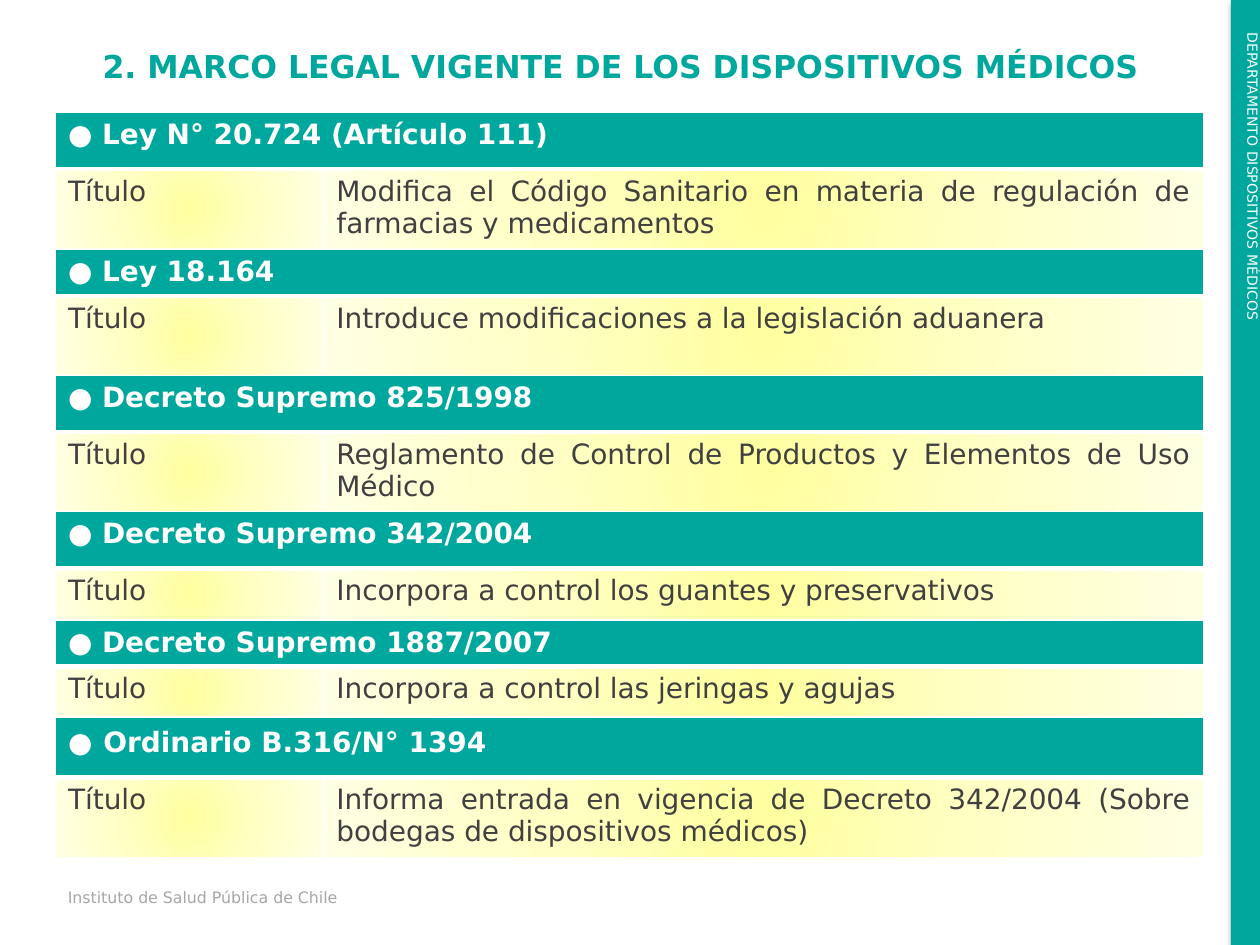
from dataclasses import dataclass

from lxml.etree import SubElement
from pptx import Presentation
from pptx.dml.color import RGBColor
from pptx.enum.shapes import MSO_SHAPE
from pptx.enum.text import MSO_ANCHOR, PP_ALIGN
from pptx.oxml import parse_xml
from pptx.oxml.ns import nsdecls, qn
from pptx.util import Inches, Pt


@dataclass(frozen=True)
class Theme:
    font: str = "DejaVu Sans"
    teal: str = "00A79D"
    white: str = "FFFFFF"
    ink: str = "404040"
    grey: str = "A6A6A6"
    glow: tuple = ((0, "FFFFA0"), (50, "FFFFC5"), (100, "FFFFE3"))
    title_size: int = 18
    body_size: int = 16
    footer_size: int = 9
    side_size: int = 8


theme = Theme()


def add_span(para, text, *, size=theme.body_size, color=theme.ink, bold=False):
    span = para.add_run()
    span.text = text
    span.font.name = theme.font
    span.font.size = Pt(size)
    span.font.bold = bold
    span.font.color.rgb = RGBColor.from_string(color)


def format_cell(cell, top, bottom, glowing):
    """Draw white borders (top and bottom widths in points), then the fill."""
    properties = cell._tc.get_or_add_tcPr()
    for side, width in (("L", 1), ("R", 1), ("T", top), ("B", bottom)):
        line = SubElement(properties, qn(f"a:ln{side}"), w=str(Pt(width)))
        fill = SubElement(line, qn("a:solidFill"))
        SubElement(fill, qn("a:srgbClr"), val=theme.white)
    if glowing:
        stops = "".join(
            f'<a:gs pos="{position * 1000}"><a:srgbClr val="{color}"/></a:gs>'
            for position, color in theme.glow
        )
        properties.append(parse_xml(
            f'<a:gradFill {nsdecls("a")} rotWithShape="1"><a:gsLst>{stops}</a:gsLst>'
            '<a:path path="circle"><a:fillToRect l="50000" t="50000" r="50000" b="50000"/>'
            "</a:path></a:gradFill>"
        ))
    else:
        cell.fill.solid()
        cell.fill.fore_color.rgb = RGBColor.from_string(theme.teal)


deck = Presentation()
deck.slide_width, deck.slide_height = Inches(10), Inches(7.5)
page = deck.slides.add_slide(deck.slide_layouts[5])

# Footer and side strip
footer = page.shapes.add_textbox(Inches(0.44), Inches(7), Inches(3.62), Inches(0.5))
footer.text_frame.word_wrap = True
add_span(footer.text_frame.paragraphs[0], "Instituto de Salud Pública de Chile",
         size=theme.footer_size, color=theme.grey)

strip = page.shapes.add_shape(MSO_SHAPE.RECTANGLE, Inches(9.77), 0, Inches(0.23), Inches(7.5))
strip.fill.solid()
strip.fill.fore_color.rgb = RGBColor.from_string(theme.teal)
strip.line.fill.background()
strip._element.spPr.append(parse_xml(
    f'<a:effectLst {nsdecls("a")}><a:outerShdw blurRad="{Pt(3.1)}" dist="{Pt(1.8)}" '
    'dir="5400000" rotWithShape="0"><a:srgbClr val="000000"><a:alpha val="35000"/>'
    "</a:srgbClr></a:outerShdw></a:effectLst>"
))

department = page.shapes.add_textbox(Inches(9.59), Inches(0.16), Inches(0.47), Inches(4.28))
department.text_frame.word_wrap = True
department.text_frame._txBody.bodyPr.set("vert", "vert")
add_span(department.text_frame.paragraphs[0], "DEPARTAMENTO DISPOSITIVOS MÉDICOS",
         size=theme.side_size, color=theme.white)

# Title
title = page.shapes.title
title.left, title.top = Inches(0.44), Inches(0.32)
title.width, title.height = Inches(8.97), Inches(0.54)
title.text_frame.vertical_anchor = MSO_ANCHOR.TOP
title_para = title.text_frame.paragraphs[0]
title_para.alignment = PP_ALIGN.CENTER
add_span(title_para, "2. MARCO LEGAL VIGENTE DE LOS DISPOSITIVOS MÉDICOS",
         size=theme.title_size, color=theme.teal, bold=True)

# One table per regulation: name, description, top, row heights, size of the gap after the dot
regulations = [
    ("Ley N° 20.724 (Artículo 111)",
     "Modifica el Código Sanitario en materia de regulación de farmacias y medicamentos",
     0.89, (0.45, 0.63), 16),
    ("Ley 18.164", "Introduce modificaciones a la legislación aduanera",
     1.98, (0.37, 0.63), 16),
    ("Decreto Supremo 825/1998",
     "Reglamento de Control de Productos y Elementos de Uso Médico",
     2.98, (0.45, 0.63), 16),
    ("Decreto Supremo 342/2004", "Incorpora a control los guantes y preservativos",
     4.06, (0.45, 0.41), 16),
    ("Decreto Supremo 1887/2007", "Incorpora a control las jeringas y agujas",
     4.92, (0.37, 0.41), 16),
    ("Ordinario B.316/N° 1394",
     "Informa entrada en vigencia de Decreto 342/2004 (Sobre bodegas de dispositivos médicos)",
     5.69, (0.48, 0.63), 18),
]
column_widths = (2.13, 6.98)

for name, description, top, row_heights, gap_size in regulations:
    table = page.shapes.add_table(
        2, 2, Inches(0.44), Inches(top), Inches(sum(column_widths)), Inches(sum(row_heights))
    ).table
    table.first_row = table.horz_banding = False
    for column, width in zip(table.columns, column_widths):
        column.width = Inches(width)
    for row, height in zip(table.rows, row_heights):
        row.height = Inches(height)

    for column_index in range(2):
        format_cell(table.cell(0, column_index), top=1, bottom=3, glowing=False)
        format_cell(table.cell(1, column_index), top=3, bottom=1, glowing=True)

    heading = table.cell(0, 0)
    heading.merge(table.cell(0, 1))
    heading_para = heading.text_frame.paragraphs[0]
    for text, size in (("●", theme.body_size), (" ", gap_size), (name, theme.body_size)):
        add_span(heading_para, text, size=size, color=theme.white, bold=True)

    add_span(table.cell(1, 0).text_frame.paragraphs[0], "Título")
    description_para = table.cell(1, 1).text_frame.paragraphs[0]
    description_para.alignment = PP_ALIGN.JUSTIFY
    add_span(description_para, description)

deck.save("out.pptx")
